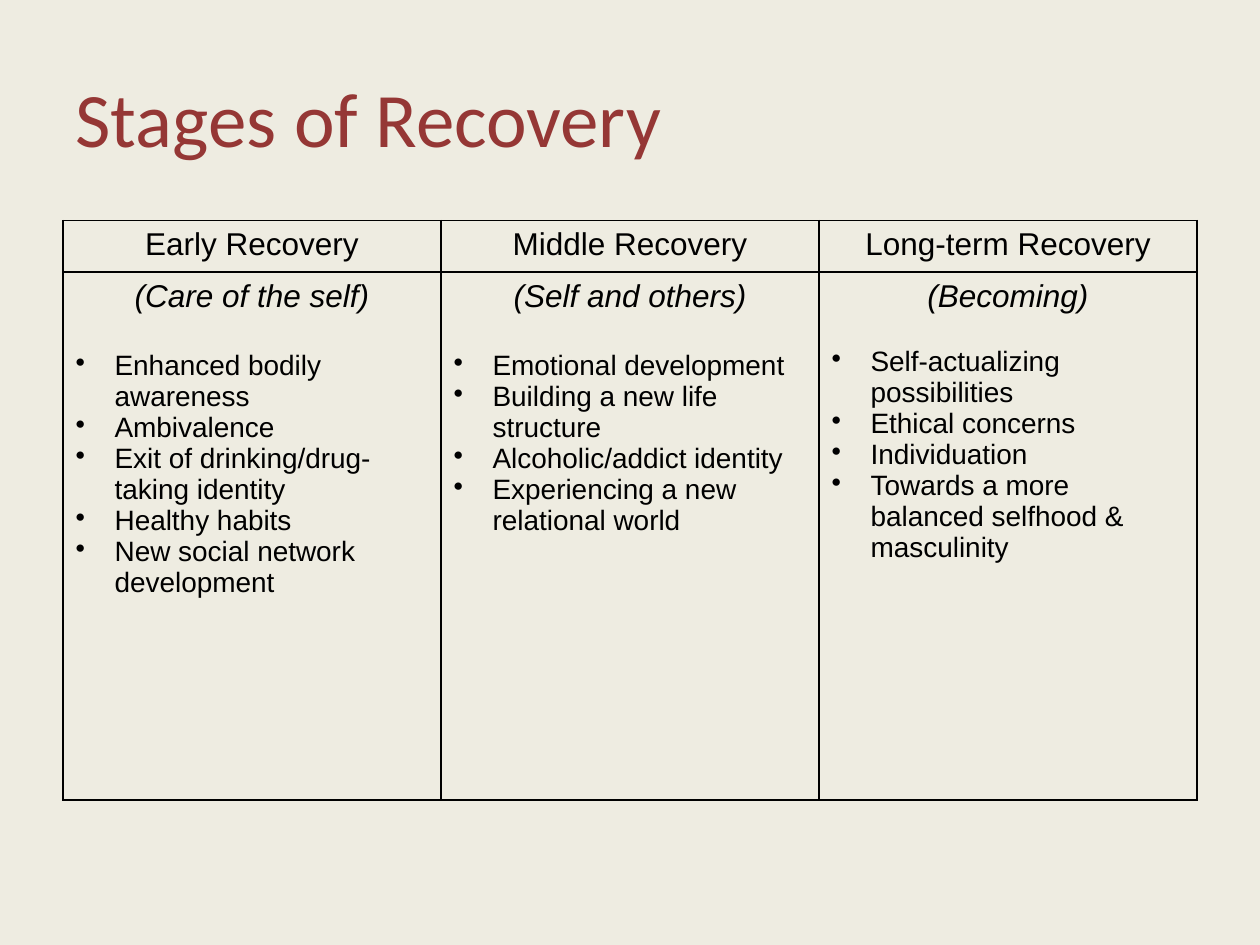
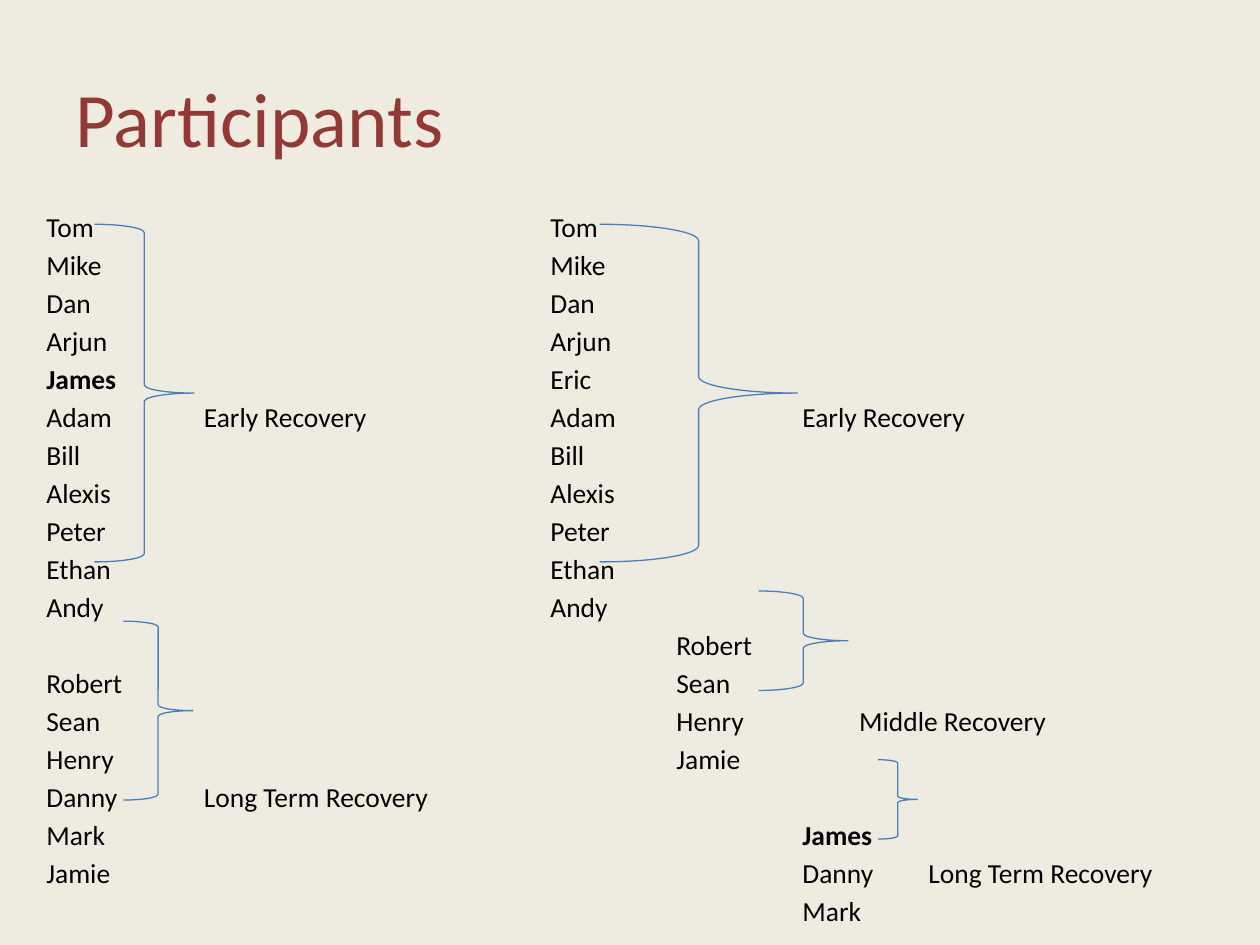
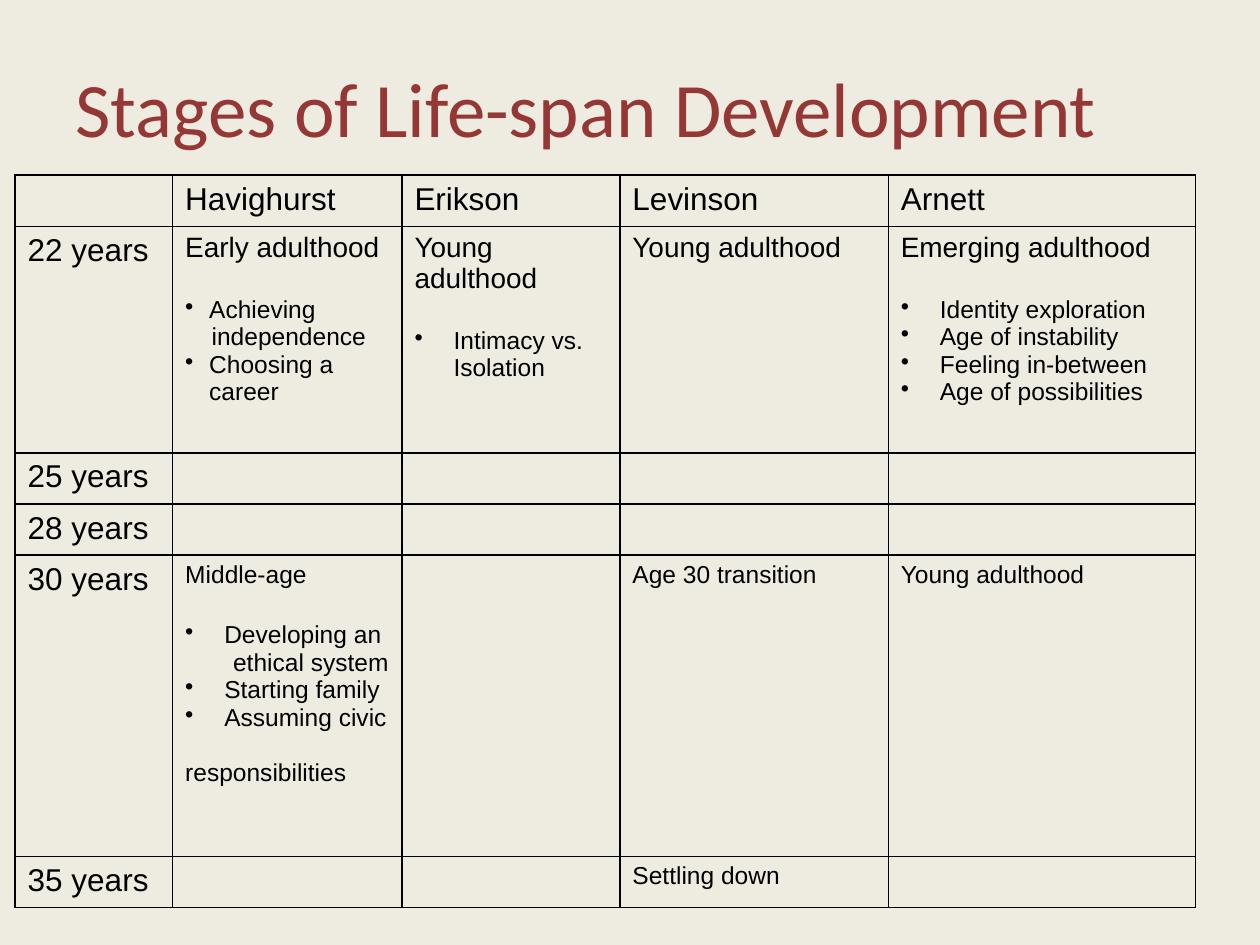
"""Builds three slides on the stages of recovery and of life-span development."""
from dataclasses import dataclass

from lxml import etree
from pptx import Presentation
from pptx import util as u
from pptx.dml.color import RGBColor
from pptx.enum import shapes, text
from pptx.oxml.ns import qn

CREAM = RGBColor(0xEE, 0xEC, 0xE1)
BRICK = RGBColor(0x95, 0x37, 0x35)
BLUE = RGBColor(0x4B, 0x7E, 0xBC)
BLACK = RGBColor(0, 0, 0)
CENTER = text.PP_ALIGN.CENTER
LEFT = text.PP_ALIGN.LEFT
BULLET_INDENT = 0.31
LINE_HEIGHT = 1.15

NAME_COLUMN, FIRST_LABEL, SECOND_GROUP, MIDDLE_GROUP = 0, 1.25, 4, 5
LONG_GROUP, MIDDLE_LABEL, LONG_LABEL = 6, 6.45, 7
STABLE_NAMES = ["Tom", "Mike", "Dan", "Arjun", "James", "Adam", "Bill",
                "Alexis", "Peter", "Ethan", "Andy"]
BRACES = [(0.75, 1.78, 0.79, 2.68), (0.98, 4.93, 0.55, 1.42),
          (4.76, 1.78, 1.57, 2.68), (6.02, 4.69, 0.71, 0.79),
          (6.97, 6.03, 0.31, 0.63)]


@dataclass
class Line:
    """One paragraph of a table cell."""
    words: str
    size: float = 18
    italic: bool = False
    align: text.PP_ALIGN = LEFT
    indent: float = 0
    bullet: bool = False
    before: float = 0


def apply(target, **values):
    """Set each named attribute of the target."""
    for name, value in values.items():
        setattr(target, name, value)


def add_span(para, words, size, face, color=BLACK, **values):
    """Add a formatted run to a paragraph."""
    span = para.add_run()
    span.text = words
    span.font.color.rgb = color
    apply(span.font, size=u.Pt(size), name=face, **values)


def add_page(deck, title, height=1.25):
    """Add a title-only page and place its title."""
    page = deck.slides.add_slide(deck.slide_layouts[5])
    box = page.shapes.title
    apply(box, left=u.Inches(0.5), top=u.Inches(0.3),
          width=u.Inches(9), height=u.Inches(height))
    apply(box.text_frame, vertical_anchor=text.MSO_ANCHOR.MIDDLE, word_wrap=True)
    para = box.text_frame.paragraphs[0]
    para.alignment = LEFT
    add_span(para, title, 44, "Calibri", BRICK)
    return page


def add_borders(cell):
    """Draw a thin black line on all sides of a cell."""
    properties = cell._tc.get_or_add_tcPr()
    for index, side in enumerate(("lnL", "lnR", "lnT", "lnB")):
        line = etree.Element(qn(f"a:{side}"), w=str(u.Pt(1)))
        fill = etree.SubElement(line, qn("a:solidFill"))
        etree.SubElement(fill, qn("a:srgbClr"), val=str(BLACK))
        properties.insert(index, line)


def write_line(para, line):
    """Write one cell paragraph with its indent and bullet."""
    apply(para, alignment=line.align, space_before=u.Pt(line.before))
    properties = para._p.get_or_add_pPr()
    properties.set("marL", str(u.Inches(line.indent)))
    properties.set("indent", str(-u.Inches(line.indent) if line.bullet else 0))
    if line.bullet:
        etree.SubElement(properties, qn("a:buChar"), char="•")
    add_span(para, line.words, line.size, "Arial", italic=line.italic)


def add_grid(page, left, top, columns, rows, contents):
    """Add a bordered table whose cells are lists of lines."""
    frame = page.shapes.add_table(
        len(rows), len(columns), u.Inches(left), u.Inches(top),
        u.Inches(sum(columns)), u.Inches(sum(rows)))
    table = frame.table
    apply(table, first_row=False, horz_banding=False)
    for column, width in zip(table.columns, columns):
        column.width = u.Inches(width)
    for row, height, row_lines in zip(table.rows, rows, contents):
        row.height = u.Inches(height)
        for cell, lines in zip(row.cells, row_lines):
            cell.fill.background()
            add_borders(cell)
            for index, line in enumerate(lines):
                body = cell.text_frame
                write_line(body.add_paragraph() if index else body.paragraphs[0], line)


def bullets(items, size, gap_size, indent=BULLET_INDENT):
    """Make bulleted lines with a gap of one line above the first."""
    return [Line(item, size, indent=indent, bullet=True,
                 before=0 if index else gap_size * LINE_HEIGHT)
            for index, item in enumerate(items)]


def add_brace(page, left, top, width, height):
    """Add a thin right brace."""
    brace = page.shapes.add_shape(
        shapes.MSO_SHAPE.RIGHT_BRACE, *map(u.Inches, (left, top, width, height)))
    brace.shadow.inherit = False
    brace.fill.background()
    brace.line.color.rgb = BLUE
    brace.line.width = u.Pt(0.75)


def add_roster(page, rows):
    """Add a text box of rows, each mapping a tab position to a name."""
    box = page.shapes.add_textbox(*map(u.Inches, (0.27, 1.62, 9.53, 5.67)))
    body = box.text_frame
    body.word_wrap = True
    for index, row in enumerate(rows):
        para = body.add_paragraph() if index else body.paragraphs[0]
        para.space_before = u.Pt(2.86)
        stops = etree.SubElement(para._p.get_or_add_pPr(), qn("a:tabLst"))
        for position, name in row.items():
            if position:
                etree.SubElement(stops, qn("a:tab"), pos=str(u.Inches(position)), algn="l")
                add_span(para, "\t", 15.7, "Calibri")
            add_span(para, name, 15.7, "Calibri", bold=name == "James")


def build_recovery(deck):
    """Build the table of recovery stages."""
    stages = [
        ("Early Recovery", "(Care of the self)", 18,
         ["Enhanced bodily awareness", "Ambivalence",
          "Exit of drinking/drug-taking identity", "Healthy habits",
          "New social network development"]),
        ("Middle Recovery", "(Self and others)", 18,
         ["Emotional development", "Building a new life structure",
          "Alcoholic/addict identity", "Experiencing a new relational world"]),
        ("Long-term Recovery", "(Becoming)", 16,
         ["Self-actualizing possibilities", "Ethical concerns", "Individuation",
          "Towards a more balanced selfhood & masculinity"]),
    ]
    heads = [[Line(name, align=CENTER)] for name, *_ in stages]
    details = [[Line(theme, italic=True, align=CENTER)] + bullets(items, 16, gap)
               for _, theme, gap, items in stages]
    page = add_page(deck, "Stages of Recovery")
    add_grid(page, 0.5, 1.75, [3] * 3, [0.41, 4.19], [heads, details])


def build_participants(deck):
    """Build the two groupings of participants."""
    rows = [{NAME_COLUMN: name, SECOND_GROUP: "Eric" if name == "James" else name}
            for name in STABLE_NAMES]
    rows[5] = {NAME_COLUMN: "Adam", FIRST_LABEL: "Early Recovery",
               SECOND_GROUP: "Adam", LONG_GROUP: "Early Recovery"}
    rows += [
        {MIDDLE_GROUP: "Robert"},
        {NAME_COLUMN: "Robert", MIDDLE_GROUP: "Sean"},
        {NAME_COLUMN: "Sean", MIDDLE_GROUP: "Henry", MIDDLE_LABEL: "Middle Recovery"},
        {NAME_COLUMN: "Henry", MIDDLE_GROUP: "Jamie"},
        {NAME_COLUMN: "Danny", FIRST_LABEL: "Long Term Recovery"},
        {NAME_COLUMN: "Mark", LONG_GROUP: "James"},
        {NAME_COLUMN: "Jamie", LONG_GROUP: "Danny", LONG_LABEL: "Long Term Recovery"},
        {LONG_GROUP: "Mark"},
    ]
    page = add_page(deck, "Participants")
    add_roster(page, rows)
    for brace in BRACES:
        add_brace(page, *brace)


def build_life_span(deck):
    """Build the table of life-span theories by age."""
    achieving, choosing = bullets(["Achieving", "Choosing a career"], 14, 16, 0.19)
    developing, starting, assuming = bullets(
        ["Developing an", "Starting family", "Assuming civic"], 14, 16)
    early = [Line("Early adulthood", 16), achieving,
             Line("independence", 14, indent=0.21), choosing]
    intimacy = [Line("Young adulthood", 16)] + bullets(["Intimacy vs. Isolation"], 14, 16)
    emerging = [Line("Emerging adulthood", 16)] + bullets(
        ["Identity exploration", "Age of instability", "Feeling in-between",
         "Age of possibilities"], 14, 16)
    middle = [Line("Middle-age", 14), developing,
              Line("ethical system", 14, indent=0.38), starting, assuming,
              Line("responsibilities", 14, before=14 * LINE_HEIGHT)]
    theorists = ["Havighurst", "Erikson", "Levinson", "Arnett"]
    contents = [
        [[]] + [[Line(name)] for name in theorists],
        [[Line("22 years")], early, intimacy, [Line("Young adulthood", 16)], emerging],
        [[Line("25 years")], [], [], [], []],
        [[Line("28 years")], [], [], [], []],
        [[Line("30 years")], middle, [], [Line("Age 30 transition", 14)],
         [Line("Young adulthood", 14)]],
        [[Line("35 years")], [], [], [Line("Settling down", 14)], []],
    ]
    page = add_page(deck, "Stages of Life-span Development", 1.09)
    add_grid(page, 0.12, 1.39, [1.25, 1.82, 1.73, 2.13, 2.44],
             [0.39, 1.8, 0.4, 0.4, 2.39, 0.4], contents)


def main():
    """Build and save the deck."""
    deck = Presentation()
    apply(deck, slide_width=u.Inches(10), slide_height=u.Inches(7.5))
    fill = deck.slide_master.background.fill
    fill.solid()
    fill.fore_color.rgb = CREAM
    build_recovery(deck)
    build_participants(deck)
    build_life_span(deck)
    deck.save("out.pptx")


if __name__ == "__main__":
    main()
